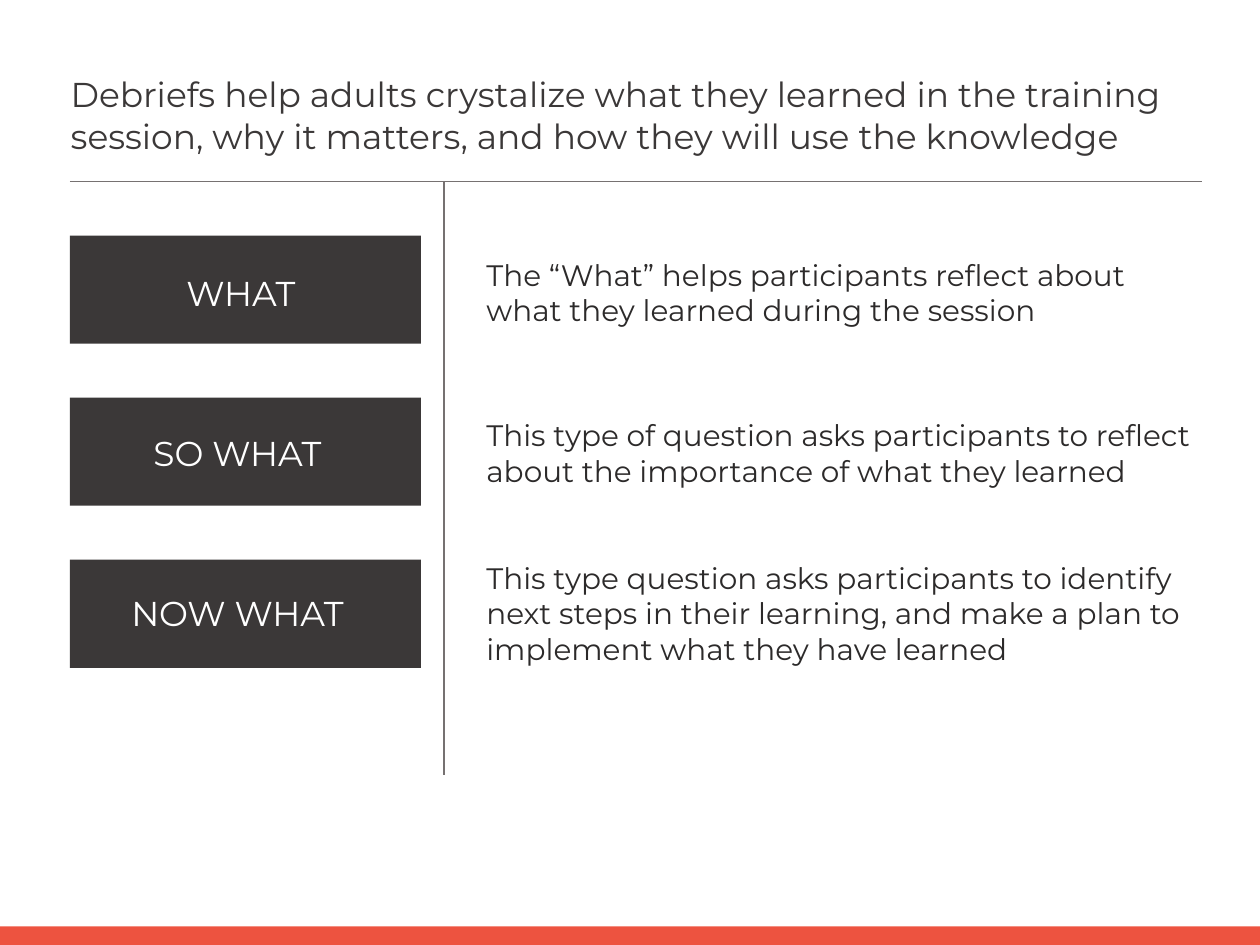
from pptx import Presentation
from pptx.dml.color import RGBColor
from pptx.enum.shapes import MSO_CONNECTOR, MSO_SHAPE
from pptx.enum.text import MSO_ANCHOR, PP_ALIGN
from pptx.oxml.ns import qn
from pptx.util import Inches, Pt
from lxml import etree

RECT, LINE = MSO_SHAPE.RECTANGLE, MSO_CONNECTOR.STRAIGHT
TOP, MID = MSO_ANCHOR.TOP, MSO_ANCHOR.MIDDLE
LEFT, CENTER = PP_ALIGN.LEFT, PP_ALIGN.CENTER

TITLE = ("Debriefs help adults crystalize what they learned in the training "
         "session, why it matters, and how they will use the knowledge")
# label, label width, explanation
ROWS = [
    ("WHAT ", 3.96,
     "The “What” helps participants reflect about what they learned "
     "during the session"),
    ("SO WHAT ", 3.88,
     "This type of question asks participants to reflect about the "
     "importance of what they learned"),
    ("NOW WHAT ", 3.88,
     "This type question asks participants to identify next steps in their "
     "learning, and make a plan to implement what they have learned"),
]

DARK, INK, GRAY, RED, WHITE = "3B3838", "2C2A2A", "767171", "ED5340", "FFFFFF"
STYLES = {
    "title": {"size": Pt(28), "color": DARK, "align": LEFT, "anchor": TOP},
    "label": {"size": Pt(28), "color": WHITE, "align": CENTER, "anchor": MID},
    "body": {"size": Pt(24), "color": INK, "align": LEFT, "anchor": MID},
}
EDGE, RIGHT = 0.79, 13.57
RULE_Y, SPLIT_X, SPLIT_END = 2.05, 5.01, 8.75
BAR_TOP, BAR_W, BAR_H, BAR_STEP = 2.66, 3.96, 1.22, 1.83
TEXT_TOP, TEXT_H, TEXT_STEP = 2.9, 0.8, 1.81
BODY_X = 5.39

deck = Presentation()
deck.slide_width, deck.slide_height = Inches(14.22), Inches(10.67)
slide = deck.slides.add_slide(deck.slide_layouts[6])
shapes = slide.shapes


def rgb(code):
    return RGBColor.from_string(code)


def add_bar(x, y, w, h, color):
    bar = shapes.add_shape(RECT, *map(Inches, (x, y, w, h)))
    bar.shadow.inherit = False
    bar.fill.solid()
    bar.fill.fore_color.rgb = rgb(color)
    bar.line.fill.background()


def add_rule(x1, y1, x2, y2):
    rule = shapes.add_connector(LINE, *map(Inches, (x1, y1, x2, y2)))
    rule.line.color.rgb = rgb(GRAY)
    rule.line.width = Pt(1)
    etree.SubElement(rule._element.spPr, qn("a:effectLst"))


def add_text(text, x, y, w, h, style):
    look = STYLES[style]
    frame = shapes.add_textbox(*map(Inches, (x, y, w, h))).text_frame
    para = frame.paragraphs[0]
    para.text = text
    font = para.runs[0].font
    font.color.rgb = rgb(look["color"])
    for part, name, value in (
        (frame, "word_wrap", True),
        (frame, "vertical_anchor", look["anchor"]),
        (para, "alignment", look["align"]),
        (font, "name", "Montserrat"),
        (font, "size", look["size"]),
    ):
        setattr(part, name, value)


add_bar(0, 10.46, 14.22, 0.21, RED)
add_text(TITLE, 0.7, 0.78, 12.86, 1.04, "title")
add_rule(EDGE, RULE_Y, RIGHT, RULE_Y)
for i, (label, width, body) in enumerate(ROWS):
    y = TEXT_TOP + i * TEXT_STEP
    add_bar(EDGE, BAR_TOP + i * BAR_STEP, BAR_W, BAR_H, DARK)
    add_text(label, EDGE, y, width, TEXT_H, "label")
    add_text(body, BODY_X, y, RIGHT - BODY_X, TEXT_H, "body")
add_rule(SPLIT_X, SPLIT_END, SPLIT_X, RULE_Y)

deck.save("out.pptx")
